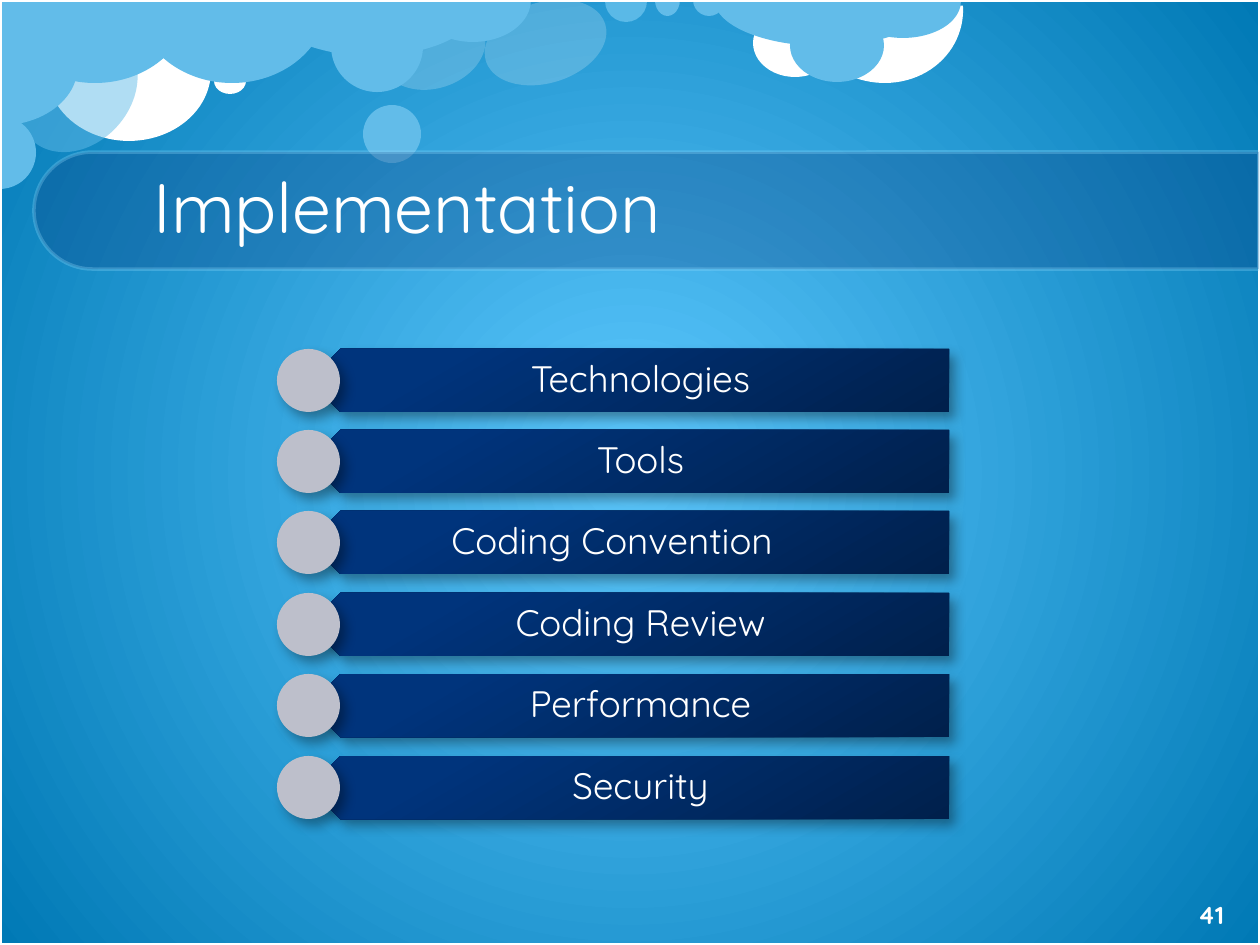
from lxml.etree import SubElement
from pptx import Presentation
from pptx.dml.color import RGBColor
from pptx.enum.shapes import MSO_SHAPE as SHAPE
from pptx.enum.text import MSO_ANCHOR as ANCHOR, MSO_AUTO_SIZE as AUTO_SIZE, PP_ALIGN as ALIGN
from pptx.oxml.ns import qn
from pptx.util import Pt

PX = 914400 / 126
COLORS = {"white": "FFFFFF", "cloud": "62BCE9", "pale": "8FD9FB", "band": "073779",
          "glow": "5DC9FF", "sea": "0079B5", "navy": "00204C", "royal": "00347C",
          "blue": "00347D", "dot": "BDBFCB", "shadow": "000000"}


def add_shape(kind, box, fill=None, alpha=100, rotation=0, adjustments=()):
    shape = slide.shapes.add_shape(kind, *[round(v * PX) for v in box])
    shape.shadow.inherit = False
    shape.rotation = rotation
    for index, value in enumerate(adjustments):
        shape.adjustments[index] = value
    if fill:
        shape.fill.solid()
        shape.fill.fore_color.rgb = RGBColor.from_string(COLORS[fill])
        if alpha < 100:
            color = shape._element.spPr.find(".//" + qn("a:srgbClr"))
            SubElement(color, qn("a:alpha"), val=str(alpha * 1000))
    else:
        shape.fill.background()
    shape.line.fill.background()
    return shape


def set_gradient(owner, stops):
    """Turn the first solid fill of an element into a gradient and return it."""
    gradient = owner.find(".//" + qn("a:solidFill"))
    gradient.clear()
    gradient.tag = qn("a:gradFill")
    gradient.set("rotWithShape", "0")
    stop_list = SubElement(gradient, qn("a:gsLst"))
    for position, name in stops:
        stop = SubElement(stop_list, qn("a:gs"), pos=str(position * 1000))
        SubElement(stop, qn("a:srgbClr"), val=COLORS[name])
    return gradient


presentation = Presentation()
presentation.slide_width = round(1260 * PX)
presentation.slide_height = round(945 * PX)
slide = presentation.slides.add_slide(presentation.slide_layouts[5])

# Background: glow from the centre
slide.background.fill.solid()
gradient = set_gradient(slide._element, [(0, "glow"), (100, "sea")])
circle = SubElement(gradient, qn("a:path"), path="circle")
SubElement(circle, qn("a:fillToRect"), l="50000", t="50000", r="50000", b="50000")

# Clouds: kind, box, colour, opacity, rotation
HALF = (0, 108)
clouds = [
    ("ellipse", (392, -6, 81, 108), "white", 20, 72.8),
    ("ellipse", (47, 1, 164, 140), "white", 100, 0),
    ("arc", (805, -76, 152, 165), "white", 100, 106.5),
    ("ellipse", (753, 9, 84, 68), "white", 100, 0),
    ("half", (-1, -83, 192, 166), "cloud", 100, 0),
    ("half", (262, -55, 220, 111), "cloud", 100, 0),
    ("ellipse", (363, 105, 58, 58), "cloud", 100, 0),
    ("ellipse", (24, 23, 107, 135), "cloud", 50, 41.8),
    ("half", (-37, 116, 73, 73), "cloud", 100, 270),
    ("ellipse", (214, 68, 32, 26), "white", 100, 0),
    ("half", (136, -83, 192, 166), "cloud", 100, 0),
    ("half", (714, -48, 220, 94), "cloud", 100, 0),
    ("ellipse", (790, 9, 94, 73), "cloud", 100, 0),
    ("half", (845, -35, 116, 73), "cloud", 100, 0),
    ("ellipse", (505, -20, 81, 125), "white", 20, 72.8),
    ("half", (605, -20, 42, 42), "pale", 50, 0),
    ("half", (655, -16, 25, 32), "cloud", 100, 0),
    ("half", (693, -16, 32, 32), "cloud", 100, 0),
    ("ellipse", (331, 0, 92, 92), "cloud", 100, 0),
    ("half", (415, -42, 116, 84), "cloud", 100, 0),
    ("half", (-59, -11, 117, 156), "cloud", 100, 270),
]
kinds = {"ellipse": (SHAPE.OVAL, ()), "half": (SHAPE.PIE, HALF),
         "arc": (SHAPE.ARC, (151.8, 44.48))}
for name, box, fill, alpha, rotation in clouds:
    kind, adjustments = kinds[name]
    add_shape(kind, box, fill, alpha, rotation, adjustments)

# Frame and title band
frame = add_shape(SHAPE.RECTANGLE, (0, 0, 1260, 945))
band = add_shape(SHAPE.ROUND_2_SAME_RECTANGLE, (588, -402, 117, 1225), "band", 30, 270, (0.5, 0))
for shape, name in ((frame, "white"), (band, "pale")):
    shape.line.color.rgb = RGBColor.from_string(COLORS[name])
    shape.line.width = Pt(2)
line_color = band.line._ln.find(".//" + qn("a:srgbClr"))
SubElement(line_color, qn("a:alpha"), val="30000")

# Title, in front of the band
title = slide.shapes.title
slide.shapes._spTree.append(title._element)
texts = [(title, (141, 149, 1021, 98), "Implementation", ALIGN.LEFT, {"size": Pt(40)})]

# Slide number
number = slide.shapes.add_textbox(0, 0, 0, 0)
texts.append((number, (1162, 888, 98, 54), "41", ALIGN.CENTER, {"size": Pt(14), "bold": True}))

# List of topics: bar, label and dot in each row
topics = ["Technologies", "Tools", "Coding Convention\t", "Coding Review",
          "Performance", "Security"]
for row, topic in enumerate(topics):
    top = 349 + row * 407 // 5
    bar = add_shape(SHAPE.PENTAGON, (309, top, 640, 63), "navy", rotation=180)
    gradient = set_gradient(bar._element.spPr, [(0, "navy"), (80, "royal"), (100, "blue")])
    SubElement(gradient, qn("a:lin"), ang=str(240 * 60000), scaled="0")
    label = slide.shapes.add_textbox(0, 0, 0, 0)
    label.text_frame.margin_left = round(28 * PX)
    label.text_frame.margin_right = round(20 * PX)
    texts.append((label, (324, top, 625, 63), topic, ALIGN.CENTER, {"size": Pt(21)}))
    dot = add_shape(SHAPE.OVAL, (277, top, 63, 63), "dot")
    for shape in (bar, dot):
        effects = shape._element.spPr.find(qn("a:effectLst"))
        shadow = SubElement(effects, qn("a:outerShdw"), blurRad=str(Pt(7)), dist=str(Pt(5)),
                            dir=str(50 * 60000), rotWithShape="0")
        color = SubElement(shadow, qn("a:srgbClr"), val=COLORS["shadow"])
        SubElement(color, qn("a:alpha"), val="35000")

# Place and format all text
for shape, box, text, alignment, font_format in texts:
    shape.left, shape.top, shape.width, shape.height = [round(v * PX) for v in box]
    frame_format = {"word_wrap": True, "auto_size": AUTO_SIZE.NONE,
                    "vertical_anchor": ANCHOR.MIDDLE}
    for key, value in frame_format.items():
        setattr(shape.text_frame, key, value)
    paragraph = shape.text_frame.paragraphs[0]
    paragraph.alignment = alignment
    run = paragraph.add_run()
    run.text = text
    for key, value in {"name": "Quicksand", **font_format}.items():
        setattr(run.font, key, value)
    run.font.color.rgb = RGBColor.from_string(COLORS["white"])
    if shape is title:
        paragraph.line_spacing = Pt(56)
    elif shape is not number:
        paragraph.line_spacing = 0.9

presentation.save("out.pptx")
